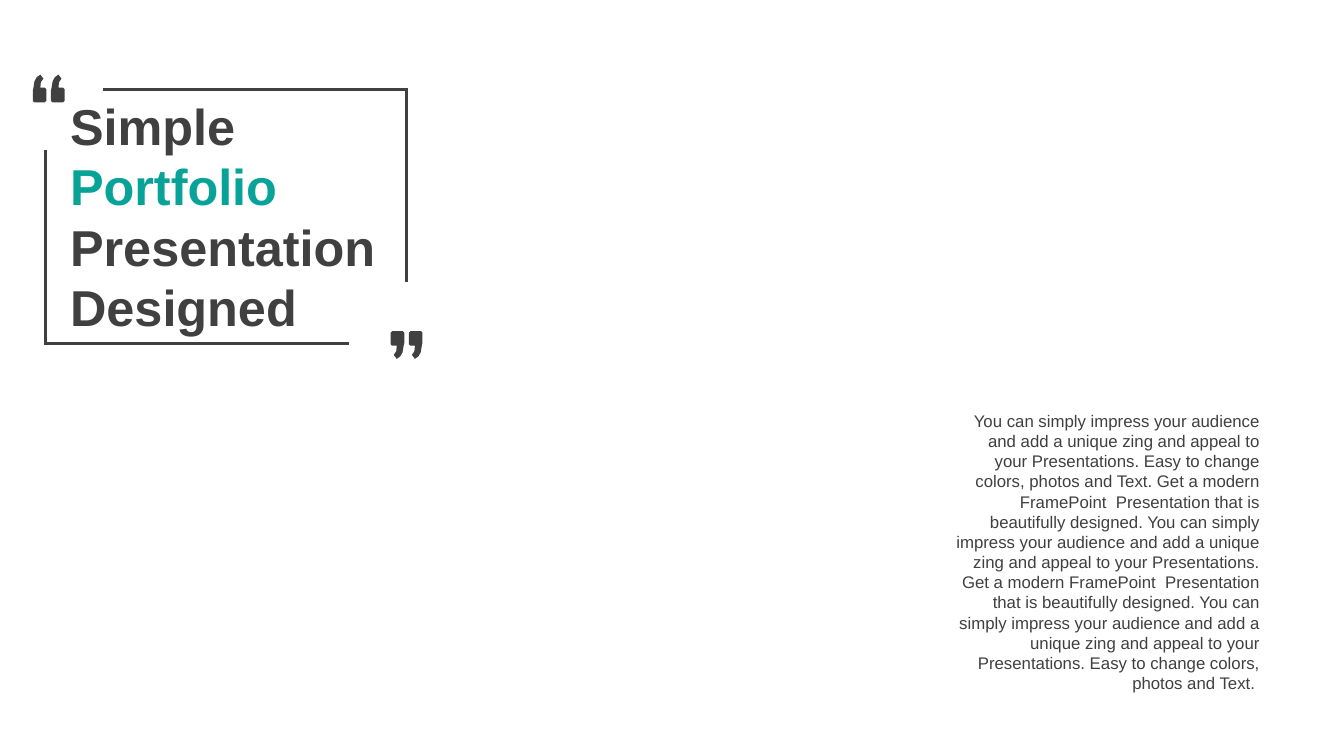
"""Build a portfolio slide with a quoted, framed title and a right-aligned paragraph."""
from lxml import etree
from pptx import Presentation
from pptx import util as u
from pptx.dml.color import RGBColor
from pptx.enum import text
from pptx.oxml import ns

COLUMNS, ROWS = 1333, 750
CELL = u.Inches(0.01)
COLORS = {"dark": "404040", "accent": "07A398"}

TITLE = [
    [("Simple ", "dark"), ("Portfolio", "accent")],
    [("Presentation Designed", "dark")],
]
BODY = [[(
    "You can simply impress your audience and add a unique zing and appeal to your "
    "Presentations. Easy to change colors, photos and Text. Get a modern FramePoint  "
    "Presentation that is beautifully designed. You can simply impress your audience "
    "and add a unique zing and appeal to your Presentations. Get a modern FramePoint  "
    "Presentation that is beautifully designed. You can simply impress your audience "
    "and add a unique zing and appeal to your Presentations. Easy to change colors, "
    "photos and Text. ", "dark")]]
TITLE_BOX = (59.5, 89, 353, 252)
BODY_BOX = (934.5, 402.5, 325, 293)
TITLE_FONT = {"name": "Arial", "size": u.Pt(36), "bold": True}
BODY_FONT = {"name": "Arial", "size": u.Pt(12), "bold": False}
FRAME_FORMAT = {"word_wrap": True, "vertical_anchor": text.MSO_ANCHOR.TOP,
                "auto_size": text.MSO_AUTO_SIZE.NONE}

BRACKET = [(102, 88.4), (403, 88.4), (403, 280)]
BRACKET_TURN = (448, 429)
QUOTE = [(34, 101.5), (44.5, 101.5), (46, 100), (46, 88.5), (44.5, 87), (40, 87),
         (40.5, 81.5), (43, 78), (40, 74), (36.4, 76.6), (34.2, 80.6), (33, 88),
         (32.5, 90), (32.5, 100)]
QUOTE_TURN = (451.5, 430)
QUOTE_STEP = 18


def color(name):
    return RGBColor.from_string(COLORS[name])


def apply(target, values):
    for name, value in values.items():
        setattr(target, name, value)


def half_turn(points, turn):
    return [(turn[0] - x, turn[1] - y) for x, y in points]


def add_outline(slide, points, close):
    scaled = [(x * CELL, y * CELL) for x, y in points]
    builder = slide.shapes.build_freeform(*scaled[0])
    builder.add_line_segments(scaled[1:], close=close)
    shape = builder.convert_to_shape()
    shape.shadow.inherit = False
    return shape


def add_quote(slide, points):
    shape = add_outline(slide, points, True)
    shape.fill.solid()
    shape.fill.fore_color.rgb = color("dark")
    shape.line.fill.background()


def add_bracket(slide, points):
    shape = add_outline(slide, points, False)
    shape.fill.background()
    shape.line.color.rgb = color("dark")
    shape.line.width = u.Pt(2)
    line = shape.element.spPr.find(ns.qn("a:ln"))
    etree.SubElement(line, ns.qn("a:miter"), lim="800000")


def write(shape, box, paragraphs, font, alignment):
    sizes = (int(n * CELL) for n in box)
    apply(shape, dict(zip(("left", "top", "width", "height"), sizes)))
    frame = shape.text_frame
    apply(frame, FRAME_FORMAT)
    for index, runs in enumerate(paragraphs):
        paragraph = frame.paragraphs[0] if index == 0 else frame.add_paragraph()
        apply(paragraph, {"alignment": alignment, "line_spacing": 1.0})
        for words, color_name in runs:
            run = paragraph.add_run()
            run.text = words
            apply(run.font, font)
            run.font.color.rgb = color(color_name)


def main():
    presentation = Presentation()
    apply(presentation, {"slide_width": COLUMNS * CELL, "slide_height": ROWS * CELL})
    slide = presentation.slides.add_slide(presentation.slide_layouts[5])

    opening = [[(x + offset, y) for x, y in QUOTE] for offset in (0, QUOTE_STEP)]
    closing = [half_turn(points, QUOTE_TURN) for points in opening]
    for points in opening + closing:
        add_quote(slide, points)

    write(slide.shapes.title, TITLE_BOX, TITLE, TITLE_FONT, text.PP_ALIGN.LEFT)
    for points in (BRACKET, half_turn(BRACKET, BRACKET_TURN)):
        add_bracket(slide, points)
    body = slide.shapes.add_textbox(0, 0, CELL, CELL)
    write(body, BODY_BOX, BODY, BODY_FONT, text.PP_ALIGN.RIGHT)

    presentation.save("out.pptx")


if __name__ == "__main__":
    main()
